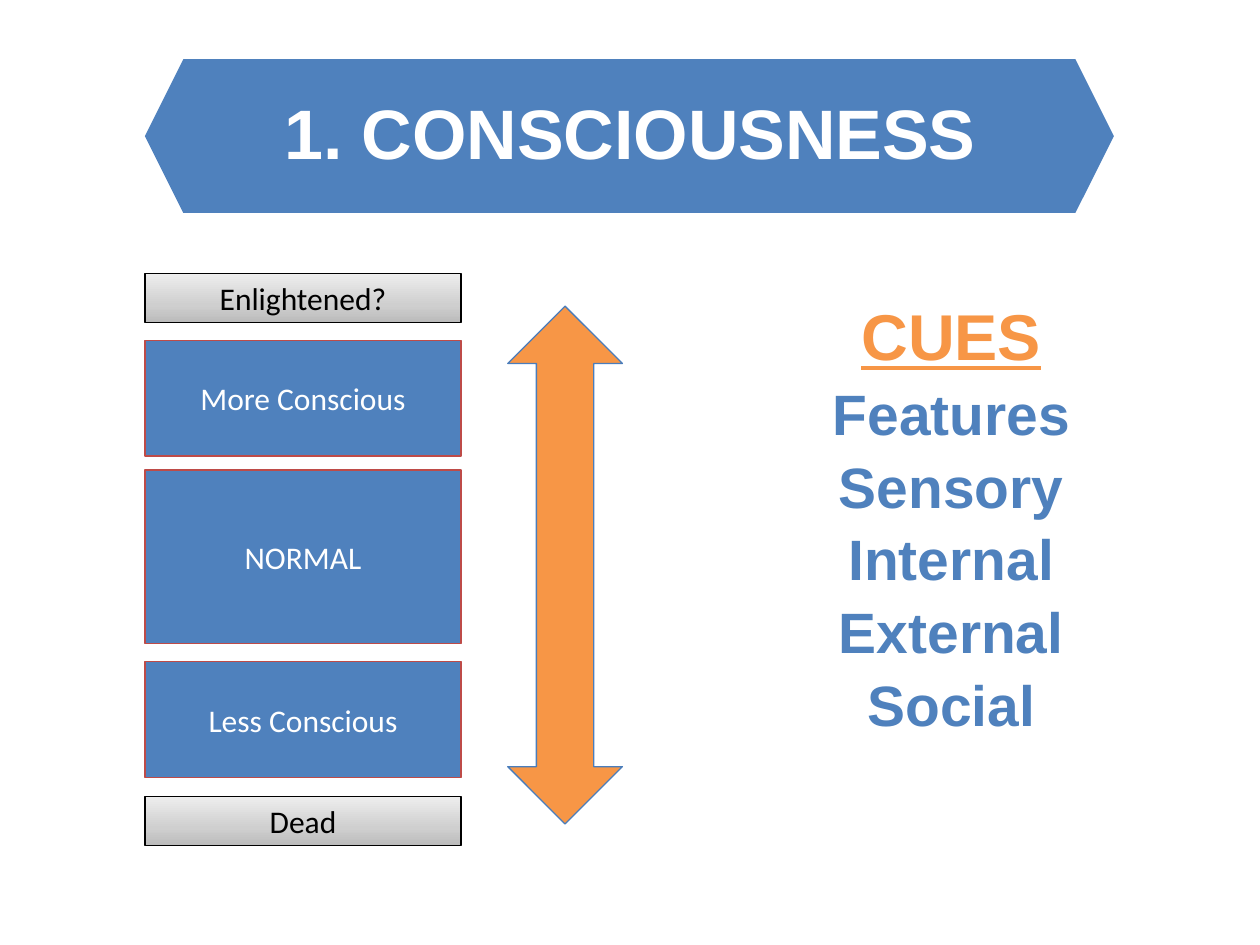
from copy import deepcopy

from pptx import Presentation
from pptx.dml.color import RGBColor
from pptx.enum import shapes, text
from pptx.oxml import xmlchemy
from pptx.util import Inches, Pt

COLORS = {
    "blue": "4F81BD",
    "orange": "F79646",
    "red": "BE4B48",
    "edge": "4A7DBB",
    "white": "FFFFFF",
    "black": "000000",
}
GRADIENT = [(0, "BBBBBB"), (0.35, "CFCFCF"), (1, "EEEEEE")]
LEVELS = [
    ("More Conscious", 2.7, 0.92),
    ("NORMAL", 3.73, 1.38),
    ("Less Conscious", 5.25, 0.92),
]
EXTREMES = [("Dead", 6.32), ("Enlightened?", 2.17)]
CUES = ["Features", "Sensory", "Internal", "External", "Social"]


def rgb(name):
    return RGBColor.from_string(COLORS[name])


def write(paragraph, content, *, size, color, font="Arial", bold=False,
          underline=False, line=None, before=0):
    properties = paragraph._p.get_or_add_pPr()
    properties.set("marL", "0")
    properties.set("indent", "0")
    properties.append(xmlchemy.OxmlElement("a:buNone"))
    paragraph.alignment = text.PP_ALIGN.CENTER
    paragraph.space_before = Pt(before)
    if line:
        paragraph.line_spacing = line
    run = paragraph.add_run()
    run.text = content
    run.font.name = font
    run.font.size = Pt(size)
    run.font.bold = bold
    run.font.underline = underline
    run.font.color.rgb = rgb(color)


def place(placeholder, left, top, width, height):
    placeholder.left, placeholder.top = Inches(left), Inches(top)
    placeholder.width, placeholder.height = Inches(width), Inches(height)
    frame = placeholder.text_frame
    frame.word_wrap = True
    frame.auto_size = text.MSO_AUTO_SIZE.NONE
    frame.vertical_anchor = text.MSO_ANCHOR.TOP
    return frame


def add_block(parent, kind, left, top, width, height, fill=None, edge=None):
    block = parent.add_shape(kind, Inches(left), Inches(top),
                             Inches(width), Inches(height))
    block.shadow.inherit = False
    if fill:
        block.fill.solid()
        block.fill.fore_color.rgb = rgb(fill)
    if edge:
        block.line.color.rgb = rgb(edge)
        block.line.width = Pt(0.75)
    else:
        block.line.fill.background()
    return block


def shade(block):
    block.fill.gradient()
    block.fill.gradient_angle = 90
    first = block.fill._fill._gradFill.gsLst[0]
    first.addnext(deepcopy(first))
    for stop, (position, color) in zip(block.fill.gradient_stops, GRADIENT):
        stop.position = position
        stop.color.rgb = RGBColor.from_string(color)


def add_level(scale, label, top, height, color, **look):
    level = add_block(scale.shapes, shapes.MSO_SHAPE.RECTANGLE,
                      1.15, top, 2.51, height, **look)
    frame = level.text_frame
    frame.word_wrap = True
    frame.vertical_anchor = text.MSO_ANCHOR.MIDDLE
    write(frame.paragraphs[0], label, size=18, color=color, font="Calibri")
    return level


def add_title(slide):
    banner = add_block(slide.shapes, shapes.MSO_SHAPE.HEXAGON,
                       1.15, 0.47, 7.69, 1.22, fill="blue")
    title = slide.shapes.title
    title.element.addprevious(banner.element)
    frame = place(title, 0, 0.66, 10, 0.77)
    write(frame.paragraphs[0], "1. CONSCIOUSNESS", size=40, color="white",
          bold=True)


def add_scale(slide):
    add_block(slide.shapes, shapes.MSO_SHAPE.UP_DOWN_ARROW,
              4.03, 2.43, 0.91, 4.11, fill="orange", edge="edge")
    scale = slide.shapes.add_group_shape()
    for label, top, height in LEVELS:
        add_level(scale, label, top, height, "white", fill="blue", edge="red")
    for label, top in EXTREMES:
        shade(add_level(scale, label, top, 0.39, "black", edge="black"))


def add_cues(slide):
    frame = place(slide.placeholders[1], 5.38, 2.37, 4.34, 3.8)
    write(frame.paragraphs[0], "CUES", size=37, color="orange", bold=True,
          underline=True, line=0.9)
    for cue in CUES:
        write(frame.add_paragraph(), cue, size=32.5, color="blue", bold=True,
              line=0.9, before=6.5)


def main():
    deck = Presentation()
    deck.slide_width, deck.slide_height = Inches(10), Inches(7.5)
    slide = deck.slides.add_slide(deck.slide_layouts[1])
    add_title(slide)
    add_scale(slide)
    add_cues(slide)
    deck.save("out.pptx")


if __name__ == "__main__":
    main()
